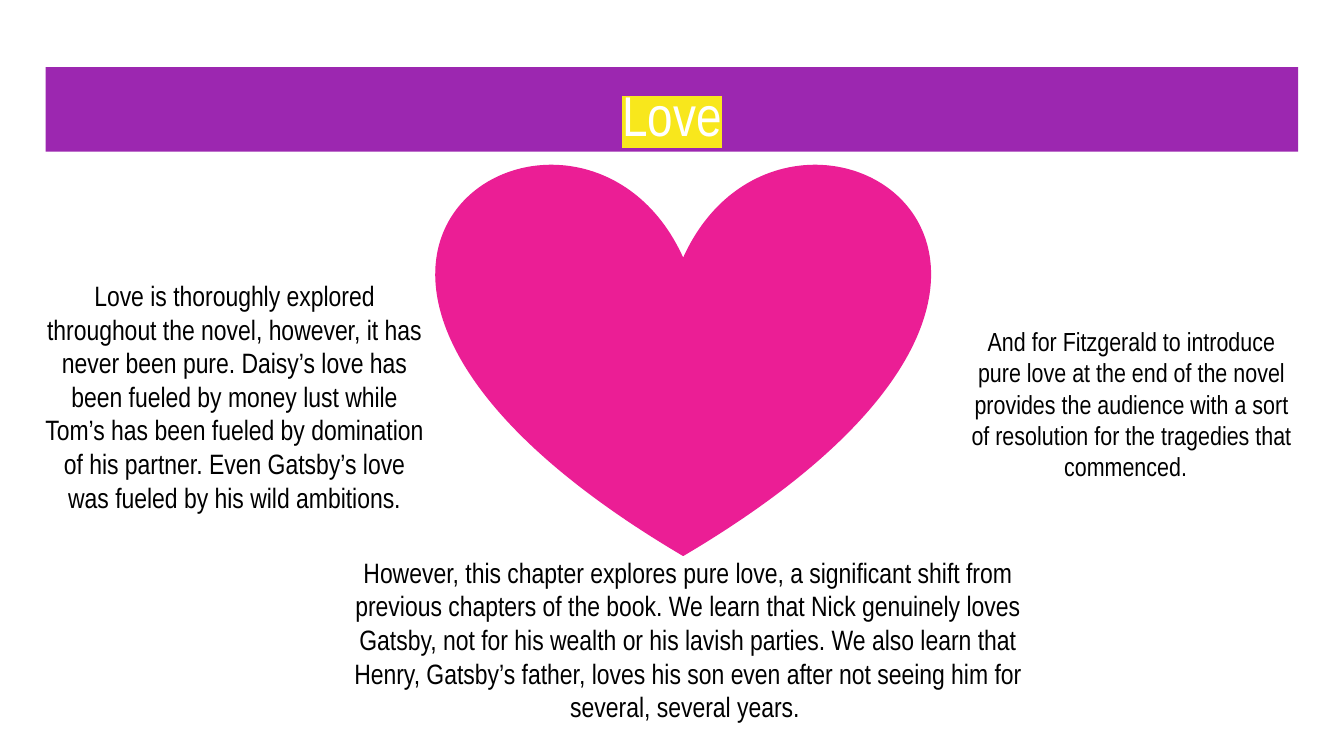
from pptx import Presentation
from pptx.dml.color import RGBColor
from pptx.enum.shapes import MSO_SHAPE
from pptx.enum.text import MSO_ANCHOR, MSO_AUTO_SIZE, PP_ALIGN
from pptx.oxml import parse_xml
from pptx.oxml.ns import nsdecls
from pptx.util import Pt

PURPLE = RGBColor(0x9C, 0x27, 0xB0)
PINK = RGBColor(0xEB, 0x1E, 0x95)
WHITE = RGBColor(0xFF, 0xFF, 0xFF)
BLACK = RGBColor(0x00, 0x00, 0x00)
YELLOW = RGBColor(0xF8, 0xE7, 0x1C)
FONT = "Arial Narrow"
INSET = Pt(7.2)


def write_centred(shape, text, size, color):
    frame = shape.text_frame
    frame.word_wrap = True
    frame.auto_size = MSO_AUTO_SIZE.NONE
    frame.vertical_anchor = MSO_ANCHOR.TOP
    frame.margin_left = frame.margin_right = INSET
    frame.margin_top = frame.margin_bottom = INSET
    para = frame.paragraphs[0]
    para.text = text
    para.alignment = PP_ALIGN.CENTER
    para.line_spacing = 1.0
    para.space_before = Pt(0)
    para.font.name = FONT
    para.font.size = Pt(size)
    para.font.color.rgb = color
    return para


deck = Presentation()
deck.slide_width, deck.slide_height = Pt(720), Pt(405)
page = deck.slides.add_slide(deck.slide_layouts[5])

# Title bar with highlighted text
title = page.shapes.title
title.left, title.top, title.width, title.height = Pt(24.5), Pt(36), Pt(671), Pt(45.2)
title.fill.solid()
title.fill.fore_color.rgb = PURPLE
para = write_centred(title, "Love", 30, WHITE)
span = para.runs[0]
span.font.fill.solid()
span.font.fill.fore_color.rgb = WHITE
highlight = parse_xml(
    f'<a:highlight {nsdecls("a")}><a:srgbClr val="{YELLOW}"/></a:highlight>'
)
span.font.fill._xPr.append(highlight)

# Heart
heart = page.shapes.add_shape(MSO_SHAPE.HEART, Pt(234.5), Pt(86), Pt(263), Pt(211.5))
heart.shadow.inherit = False
heart.fill.solid()
heart.fill.fore_color.rgb = PINK
heart.line.color.rgb = PINK
heart.line.width = Pt(0.75)

# Comments around the heart: left, top, width, height, size, text
comments = [
    (15, 142, 221.5, 202, 15,
     "Love is thoroughly explored throughout the novel, however, it has never "
     "been pure. Daisy’s love has been fueled by money lust while Tom’s has been "
     "fueled by domination of his partner. Even Gatsby’s love was fueled by his "
     "wild ambitions."),
    (171, 290.3, 395.5, 112, 15,
     "However, this chapter explores pure love, a significant shift from previous "
     "chapters of the book. We learn that Nick genuinely loves Gatsby, not for his "
     "wealth or his lavish parties. We also learn that Henry, Gatsby’s father, "
     "loves his son even after not seeing him for several, several years. "),
    (510.5, 167, 191.5, 150.5, 14,
     "And for Fitzgerald to introduce pure love at the end of the novel provides "
     "the audience with a sort of resolution for the tragedies that commenced.  "),
]
for left, top, width, height, size, text in comments:
    box = page.shapes.add_textbox(Pt(left), Pt(top), Pt(width), Pt(height))
    write_centred(box, text, size, BLACK)

deck.save("out.pptx")
